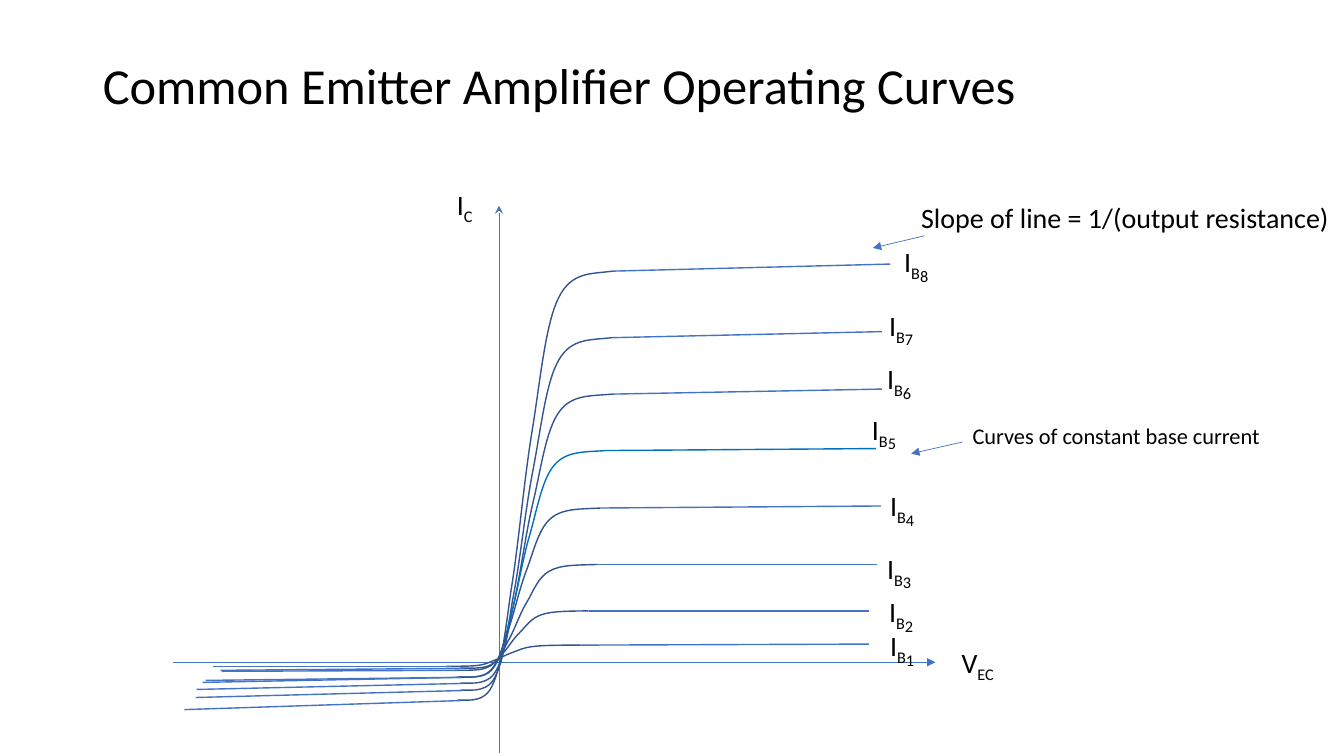
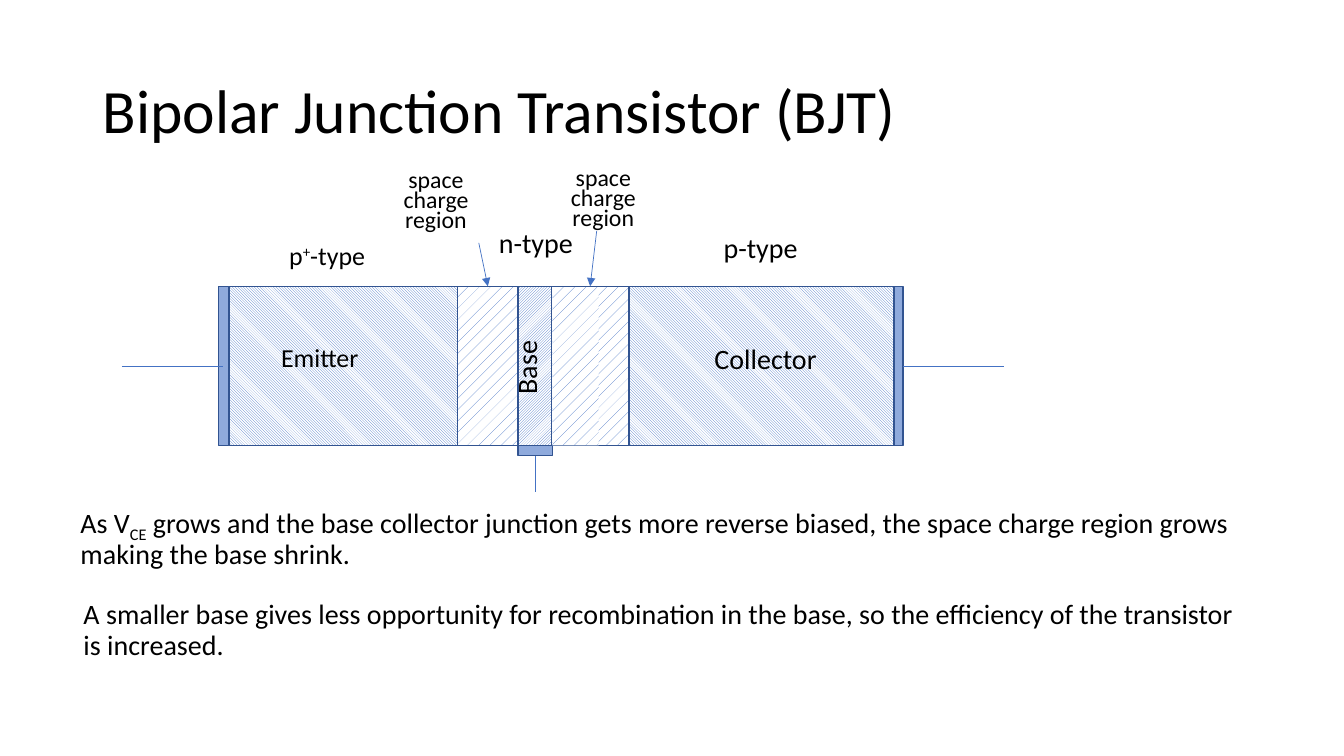
import pptx
import pptx.util
import pptx.dml.color
import pptx.enum.dml
import pptx.enum.shapes
import pptx.enum.text
import pptx.oxml.ns
from lxml import etree

PX = 9144
FONT = "Calibri"
BLACK = pptx.dml.color.RGBColor(0x00, 0x00, 0x00)
WHITE = pptx.dml.color.RGBColor(0xFF, 0xFF, 0xFF)
BLUE = pptx.dml.color.RGBColor(0x44, 0x72, 0xC4)
NAVY = pptx.dml.color.RGBColor(0x32, 0x54, 0x91)
BRIGHT = pptx.dml.color.RGBColor(0x00, 0x70, 0xC0)
CONTACT = pptx.dml.color.RGBColor(0x8F, 0xAA, 0xDC)
ALIGN = pptx.enum.text.PP_ALIGN
PATTERN = pptx.enum.dml.MSO_PATTERN
DOWN = PATTERN.LIGHT_DOWNWARD_DIAGONAL
UP = PATTERN.LIGHT_UPWARD_DIAGONAL
SPARSE = PATTERN.PERCENT_10

CURVES_TITLE = ("Common Emitter Amplifier Operating Curves", 95, 36)
BJT_TITLE = ("Bipolar Junction Transistor (BJT)", 145, 44)

KNEE_UNITS = 1000
KNEE = [
    (1000, 0),
    (865, 7), (735, 0), (652, 63),
    (568, 124), (535, 256), (484, 371),
    (432, 484), (394, 646), (348, 744),
    (310, 845), (284, 925), (226, 967),
    (168, 1012), (32, 995), (0, 1000),
]
TAIL_OVERLAP = 4

# number, knee box, right end, left end, label corner
CURVES = [
    ("8", (453, 269, 155, 426), (883, 262), (183, 704), (856, 238)),
    ("7", (456, 335, 151, 350), (875, 329), (194, 692), (841, 301)),
    ("6", (456, 391, 151, 287), (875, 386), (195, 684), (839, 354)),
    ("5", (455, 447, 146, 225), (869, 445), (201, 677), (824, 404)),
    ("4", (453, 504, 143, 168), (874, 502), (204, 675), (842, 480)),
    ("3", (456, 560, 137, 103), (870, 560), (219, 665), (839, 542)),
    ("2", (451, 606, 133, 59), (862, 606), (220, 666), (841, 585)),
    ("1", (443, 640, 133, 21), (862, 639), (211, 661), (842, 619)),
]
HIGHLIGHTED = "5"
AXIS_LABELS = [
    ([("I", 0), ("C", -25)], (428, 182, 66, 91)),
    ([("V", 0), ("EC", -25)], (917, 636, 106, 56)),
]

REGIONS = [
    ("body", (227, 284, 661, 158), DOWN),
    ("base", (514, 284, 52, 158), UP),
    ("emitter side", (454, 284, 60, 158), SPARSE),
    ("collector side", (547, 284, 77, 158), SPARSE),
]
WIDENED_REGION = (548, 285, 46, 157)
CONTACTS = [
    ("emitter", (217, 284, 10, 158)),
    ("collector", (887, 284, 9, 158)),
    ("base", (514, 442, 34, 10)),
]
SPACE_CHARGE = "space charge region"
BJT_LABELS = [
    ([("p", 0), ("+", 30), ("-type", 0)], (277, 236, 101, 44), dict(size=18.5)),
    ("n-type", (485, 223, 101, 44), {}),
    ("p-type", (708, 228, 101, 44), {}),
    (SPACE_CHARGE, (368, 166, 129, 72), dict(size=17, align=ALIGN.CENTER, spacing=.7)),
    (SPACE_CHARGE, (534, 164, 129, 72), dict(size=17, align=ALIGN.CENTER, spacing=.7)),
    ("Emitter", (269, 337, 101, 44), dict(size=18.5)),
    ("Collector", (699, 338, 134, 44), {}),
    ("Base", (504, 302, 52, 99), dict(vert="vert270")),
    ([("As V", 0), ("CE", -25),
      (" grows and the base collector junction gets more reverse biased, "
       "the space charge region grows making the base shrink.", 0)],
     (70, 497, 1168, 85), {}),
    ("A smaller base gives less opportunity for recombination in the base, "
     "so the efficiency of the transistor is increased.",
     (73, 591, 1168, 85), {}),
]


def emu(lengths):
    return [round(v * PX) for v in lengths]


def write(tf, text, size=20, align=ALIGN.LEFT, spacing=.9, before=10, vert=None):
    tf.word_wrap = True
    tf.auto_size = pptx.enum.text.MSO_AUTO_SIZE.NONE
    if vert:
        tf._txBody.bodyPr.set("vert", vert)
    p = tf.paragraphs[0]
    p.alignment = align
    p.line_spacing = spacing
    p.space_before = pptx.util.Pt(before)
    for part, baseline in [(text, 0)] if isinstance(text, str) else text:
        r = p.add_run()
        r.text = part
        r.font.name = FONT
        r.font.size = pptx.util.Pt(size)
        r.font.color.rgb = BLACK
        if baseline:
            r._r.get_or_add_rPr().set("baseline", str(baseline * 1000))


def add_text(s, text, box, **fmt):
    sp = s.shapes.add_textbox(*emu(box))
    write(sp.text_frame, text, **fmt)
    return sp


def add_titled_slide(prs, text, height, size):
    s = prs.slides.add_slide(prs.slide_layouts[5])
    sp = s.shapes.title
    sp.left, sp.top, sp.width, sp.height = emu((92, 40, 1150, height))
    sp.text_frame.vertical_anchor = pptx.enum.text.MSO_ANCHOR.MIDDLE
    write(sp.text_frame, text, size=size, before=0)
    return s


def add_line(s, start, end, color=BLUE, width=.5, head=None, tail=None,
             begin_at=None, end_at=None):
    line = s.shapes.add_connector(
        pptx.enum.shapes.MSO_CONNECTOR.STRAIGHT, *emu(start + end))
    line.line.color.rgb = color
    line.line.width = pptx.util.Pt(width)
    ln = line.line._get_or_add_ln()
    for tag, kind in (("a:headEnd", head), ("a:tailEnd", tail)):
        if kind:
            etree.SubElement(ln, pptx.oxml.ns.qn(tag), type=kind)
    etree.SubElement(line._element.spPr, pptx.oxml.ns.qn("a:effectLst"))
    if begin_at:
        line.begin_connect(*begin_at)
    if end_at:
        line.end_connect(*end_at)


def outline(sp, color, width=1):
    sp.shadow.inherit = False
    sp.line.color.rgb = color
    sp.line.width = pptx.util.Pt(width)


def add_rect(s, box, color=None, pattern=None, outlined=True):
    sp = s.shapes.add_shape(pptx.enum.shapes.MSO_SHAPE.RECTANGLE, *emu(box))
    outline(sp, NAVY)
    if not outlined:
        sp.line.fill.background()
    if pattern:
        sp.fill.patterned()
        sp.fill.pattern = pattern
        sp.fill.fore_color.rgb = BLUE
        sp.fill.back_color.rgb = WHITE
    else:
        sp.fill.solid()
        sp.fill.fore_color.rgb = color
    return sp


def curve_segments(sp):
    segments = list(sp._element.iter(pptx.oxml.ns.qn("a:lnTo")))
    for i in range(0, len(segments), 3):
        cubic = etree.Element(pptx.oxml.ns.qn("a:cubicBezTo"))
        segments[i].addprevious(cubic)
        for segment in segments[i:i + 3]:
            cubic.append(segment[0])
            segment.getparent().remove(segment)


def add_knee(s, box, color):
    left, top, width, height = box
    points = [emu((left + width * x / KNEE_UNITS, top + height * y / KNEE_UNITS))
              for x, y in KNEE]
    builder = s.shapes.build_freeform(*points[0], scale=1.0)
    builder.add_line_segments(points[1:], close=False)
    sp = builder.convert_to_shape()
    curve_segments(sp)
    sp.fill.background()
    outline(sp, color)


def build_curves(prs):
    s = add_titled_slide(prs, *CURVES_TITLE)
    add_line(s, (495, 204), (495, 747), head="stealth")
    add_line(s, (172, 657), (928, 657), tail="triangle")
    for text, box in AXIS_LABELS:
        add_text(s, text, box, align=ALIGN.CENTER)
    for number, knee, right_end, left_end, corner in CURVES:
        left, top, width, height = knee
        marked = number == HIGHLIGHTED
        add_knee(s, knee, BRIGHT if marked else NAVY)
        add_line(s, (left + width, top), right_end, BRIGHT if marked else BLUE, 1)
        add_line(s, left_end, (left + TAIL_OVERLAP, top + height), width=1)
        add_text(s, [("I", 0), ("B", -25), (number, -34)], corner + (106, 56),
                 align=ALIGN.CENTER)
    note = add_text(s, "Curves of constant base current", (955, 417, 361, 43), size=16)
    add_line(s, (955, 439), (904, 450), tail="triangle", begin_at=(note, 1))
    add_text(s, "Slope of line = 1/(output resistance)", (904, 198, 440, 43))
    add_line(s, (917, 234), (866, 246), tail="triangle")


def build_bjt(prs):
    s = add_titled_slide(prs, *BJT_TITLE)
    regions = {name: add_rect(s, box, pattern=pattern) for name, box, pattern in REGIONS}
    contacts = {name: add_rect(s, box, CONTACT) for name, box in CONTACTS}
    add_rect(s, WIDENED_REGION, pattern=SPARSE, outlined=False)
    add_line(s, (475, 241), (484, 284), tail="triangle",
             end_at=(regions["emitter side"], 0))
    add_line(s, (592, 229), (585, 284), tail="triangle",
             end_at=(regions["collector side"], 0))
    add_line(s, (121, 363), (221, 363))
    add_line(s, (996, 363), (896, 363), end_at=(contacts["collector"], 3))
    add_line(s, (531, 488), (531, 452), end_at=(contacts["base"], 2))
    for text, box, fmt in BJT_LABELS:
        add_text(s, text, box, **fmt)


def main():
    prs = pptx.Presentation()
    prs.slide_width, prs.slide_height = emu((4000 / 3, 750))
    build_curves(prs)
    build_bjt(prs)
    prs.save("out.pptx")


if __name__ == "__main__":
    main()
